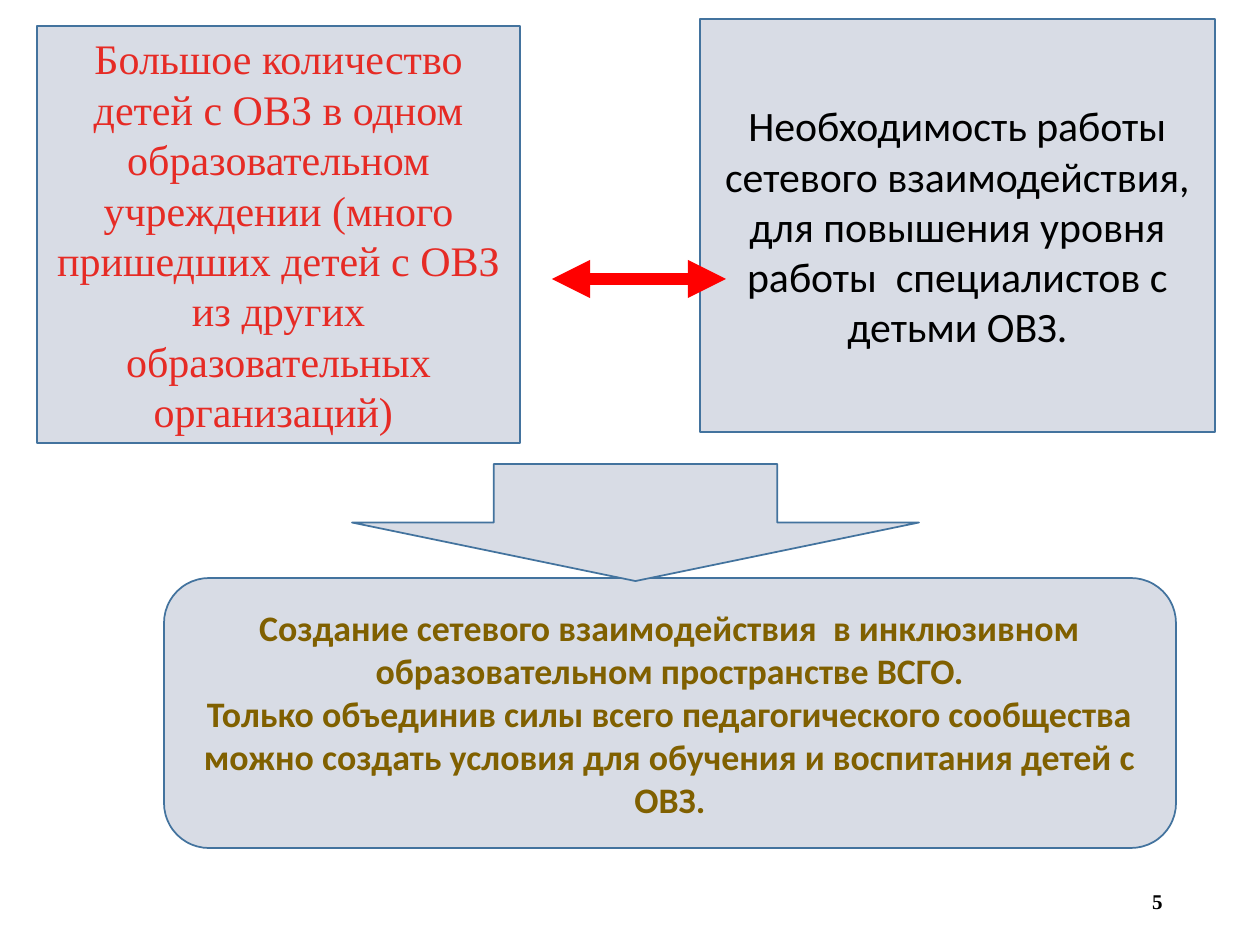
from pptx import Presentation
from pptx.dml.color import RGBColor
from pptx.enum.shapes import MSO_CONNECTOR, MSO_SHAPE
from pptx.enum.text import MSO_ANCHOR, PP_ALIGN
from pptx.oxml.ns import qn
from pptx.util import Pt
from lxml.etree import SubElement

SCALE = 914400 / 126
HUES = {"fill": "D8DCE5", "edge": "43739E", "red": "E62B25",
        "arrow": "FF0000", "gold": "806000", "black": "000000"}
CAUSE = ("Большое количество детей с ОВЗ в одном образовательном учреждении "
         "(много пришедших детей с ОВЗ из других образовательных организаций) ")
NEED = ("Необходимость работы сетевого взаимодействия, для повышения уровня "
        "работы  специалистов с детьми ОВЗ.")
GOAL = ("Создание сетевого взаимодействия  в инклюзивном образовательном "
        "пространстве ВСГО.\n"
        "Только объединив силы всего педагогического сообщества можно создать "
        "условия для обучения и воспитания детей с ОВЗ.")


def px(*nums):
    """Turn pixel lengths into EMU."""
    return [round(n * SCALE) for n in nums]


def hue(name):
    """Return a named colour."""
    return RGBColor.from_string(HUES[name])


def write(shape, text, size=24, font="Calibri", color="black", bold=False,
          align=PP_ALIGN.CENTER):
    """Fill a shape with formatted paragraphs, one for each line of text."""
    frame = shape.text_frame
    frame.word_wrap = True
    frame.vertical_anchor = MSO_ANCHOR.MIDDLE
    for i, line in enumerate(text.split("\n")):
        para = frame.add_paragraph() if i else frame.paragraphs[0]
        para.alignment = align
        para.line_spacing = Pt(1.2 * size)
        run = para.add_run()
        run.text = line
        run.font.size = Pt(size)
        run.font.name = font
        run.font.bold = bold
        run.font.color.rgb = hue(color)


def block(slide, kind, x, y, w, h):
    """Add a pale outlined shape."""
    shape = slide.shapes.add_shape(kind, *px(x, y, w, h))
    shape.shadow.inherit = False
    shape.fill.solid()
    shape.fill.fore_color.rgb = hue("fill")
    shape.line.color.rgb = hue("edge")
    shape.line.width = Pt(1)
    return shape


def link(slide, x, y, w):
    """Add a level red line with a head at each end."""
    line = slide.shapes.add_connector(MSO_CONNECTOR.STRAIGHT, *px(x, y, x + w, y))
    line.line.color.rgb = hue("arrow")
    line.line.width = Pt(7.25)
    edge = line.line._get_or_add_ln()
    for end in ("a:headEnd", "a:tailEnd"):
        SubElement(edge, qn(end), type="triangle")
    SubElement(line._element.spPr, qn("a:effectLst"))


def causes(slide, x, y, w, h):
    """Place the two reasons and the link between them."""
    left = block(slide, MSO_SHAPE.RECTANGLE, x, y + 7, 483, h - 7)
    write(left, CAUSE, font="Times New Roman", color="red")
    right = block(slide, MSO_SHAPE.RECTANGLE, x + w - 515, y, 515, h - 11)
    write(right, NEED, size=23.9)
    link(slide, x + 515, y + 260, 174)


def result(slide, x, y, w, h):
    """Place the outcome with the down arrow over it."""
    card = block(slide, MSO_SHAPE.ROUNDED_RECTANGLE, x, y + 114, w, h - 114)
    write(card, GOAL, size=20.5, color="gold", bold=True)
    block(slide, MSO_SHAPE.DOWN_ARROW, x + 188, y, 567, 117)


def number(slide, x, y, w, h):
    """Place the page number."""
    label = slide.shapes.add_textbox(*px(x, y, w, h))
    write(label, "5", size=12, font="Times New Roman", bold=True,
          align=PP_ALIGN.RIGHT)


def main():
    """Build and save the slide."""
    deck = Presentation()
    deck.slide_width, deck.slide_height = px(1260, 945)
    slide = deck.slides.add_slide(deck.slide_layouts[6])
    number(slide, 891, 876, 284, 50)
    causes(slide, 37, 19, 1178, 424)
    result(slide, 164, 464, 1012, 384)
    deck.save("out.pptx")


if __name__ == "__main__":
    main()
